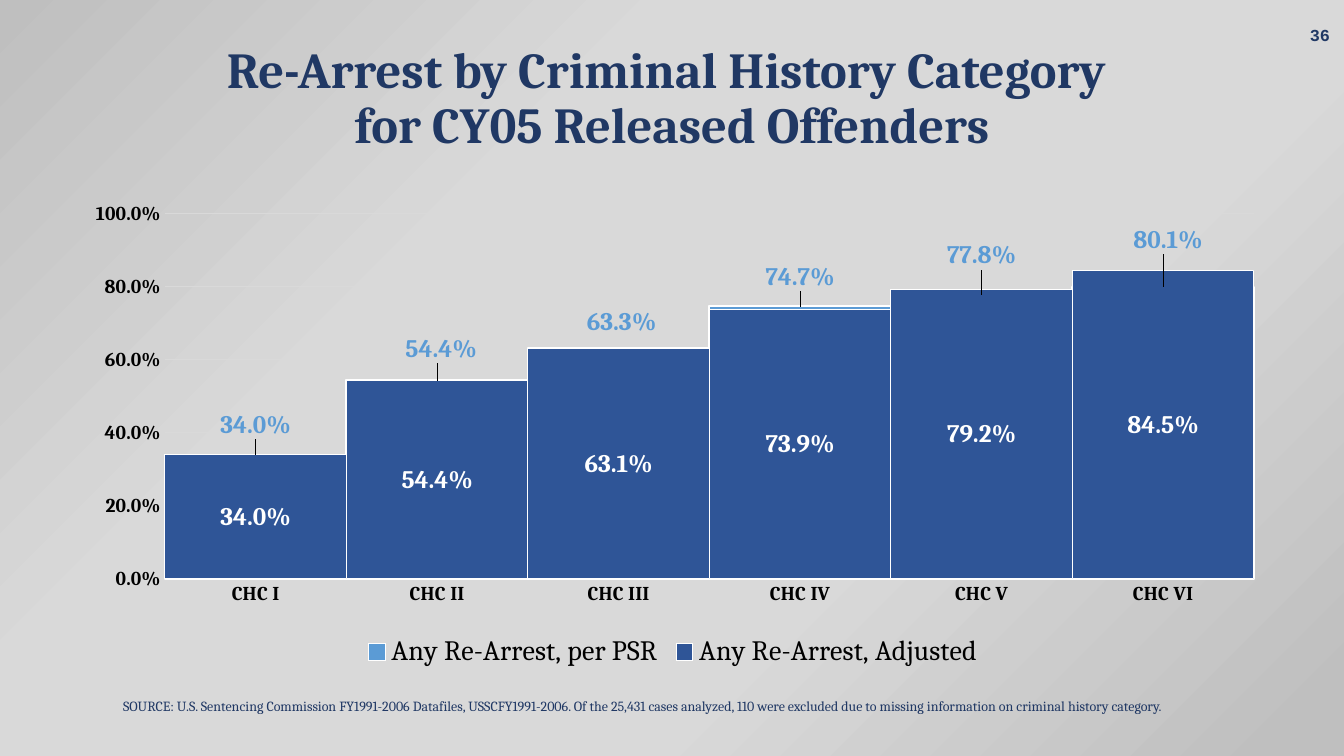
from copy import deepcopy

from lxml import etree
from pptx import Presentation
from pptx import util as u
from pptx.chart.data import CategoryChartData
from pptx.dml.color import RGBColor
from pptx.enum import chart as charts
from pptx.enum import text
from pptx.oxml.ns import qn

SCALE = 914400 / 100.8
SLIDE_BOX = (0, 0, 1344, 756)
FONT = "Cambria"
COLORS = {
    "navy": "203864",
    "light_blue": "5B9BD5",
    "dark_blue": "2F5597",
    "grid": "D9D9D9",
    "edge": "BFBFBF",
    "white": "FFFFFF",
    "black": "000000",
}
CATEGORIES = ["CHC I", "CHC II", "CHC III", "CHC IV", "CHC V", "CHC VI"]
PSR_RATES = [0.34, 0.544, 0.633, 0.747, 0.778, 0.801]
ADJUSTED_RATES = [0.34, 0.544, 0.631, 0.739, 0.792, 0.845]
PSR_LABEL_SHIFTS = [(0, -11), (4, -13), (3, -7), (0, -11), (0, -21), (5, -28)]
PERCENT = "0.0%"


def px(length):
    return u.Emu(round(length * SCALE))


def color(name):
    return RGBColor.from_string(COLORS[name])


def place(shape, box):
    shape.left, shape.top, shape.width, shape.height = map(px, box)


def format_font(font, size, ink="black", bold=False, name=FONT):
    font.name = name
    font.size = u.Pt(size)
    font.bold = bold
    font.color.rgb = color(ink)


def write(shape, words, size, align=text.PP_ALIGN.LEFT,
          anchor=text.MSO_ANCHOR.TOP, spacing=1.0, **style):
    frame = shape.text_frame
    frame.word_wrap = True
    frame.auto_size = text.MSO_AUTO_SIZE.NONE
    frame.vertical_anchor = anchor
    frame.text = words
    paragraph = frame.paragraphs[0]
    paragraph.alignment = align
    paragraph.line_spacing = spacing
    paragraph.space_before = u.Pt(0)
    for run in paragraph.runs:
        format_font(run.font, size, **style)
    return paragraph


def set_layout(parent, position, **values):
    for old in parent.findall(qn("c:layout")):
        parent.remove(old)
    layout = etree.Element(qn("c:layout"))
    manual = etree.SubElement(layout, qn("c:manualLayout"))
    for tag, value in values.items():
        etree.SubElement(manual, qn(f"c:{tag}")).set("val", str(value))
    parent.insert(position, layout)


def paint_background(slide):
    fill = slide.background.fill
    fill.gradient()
    gradient = slide.element.find(".//" + qn("a:gradFill"))
    stop_list = gradient.find(qn("a:gsLst"))
    for stop in list(stop_list)[1:]:
        stop_list.remove(stop)
    for _ in range(3):
        stop_list.append(deepcopy(stop_list[0]))
    tones = [(0, "edge"), (0.33, "grid"), (0.66, "grid"), (0.97, "edge")]
    for stop, (position, name) in zip(fill.gradient_stops, tones):
        stop.position = position
        stop.color.rgb = color(name)
    direction = gradient.find(qn("a:lin"))
    direction.set("ang", "2700000")
    direction.set("scaled", "0")


def add_heading(slide, box):
    left, top, width, height = box
    title = slide.shapes.title
    place(title, (left, top + 40, width, 133))
    write(title, "Re-Arrest by Criminal History Category \vfor CY05 Released Offenders",
          36, align=text.PP_ALIGN.CENTER, spacing=0.9, ink="navy", bold=True)
    number = slide.shapes.add_textbox(*map(px, (left + width - 306, top + 15, 302, 40)))
    write(number, "36", 12, align=text.PP_ALIGN.RIGHT, anchor=text.MSO_ANCHOR.MIDDLE,
          ink="navy", bold=True, name="Courier New")


def add_source(slide, box):
    source = slide.placeholders[1]
    place(source, box)
    paragraph = write(
        source,
        "SOURCE: U.S. Sentencing Commission FY1991-2006 Datafiles, USSCFY1991-2006. "
        "Of the 25,431 cases analyzed, 110 were excluded due to missing information "
        "on criminal history category.",
        10, spacing=0.9, ink="navy")
    properties = paragraph._p.get_or_add_pPr()
    properties.set("marL", "0")
    properties.set("indent", "0")
    properties.append(etree.Element(qn("a:buNone")))


def format_axes(chart):
    for axis in (chart.category_axis, chart.value_axis):
        axis.major_tick_mark = charts.XL_TICK_MARK.NONE
        axis.minor_tick_mark = charts.XL_TICK_MARK.NONE
        format_font(axis.tick_labels.font, 14, bold=True)
    values = chart.value_axis
    values.minimum_scale, values.maximum_scale, values.major_unit = 0, 1, 0.2
    values.tick_labels.number_format = PERCENT
    values.tick_labels.number_format_is_linked = False
    values.format.line.fill.background()
    values.has_major_gridlines = True
    for line in (values.major_gridlines.format.line, chart.category_axis.format.line):
        line.color.rgb = color("grid")
        line.width = u.Pt(0.75)


def format_series(series, fill, line_width, position, ink):
    series.format.fill.solid()
    series.format.fill.fore_color.rgb = color(fill)
    series.format.line.color.rgb = color("white")
    series.format.line.width = u.Pt(line_width)
    labels = series.data_labels
    labels.show_value = True
    labels.number_format = PERCENT
    labels.number_format_is_linked = False
    labels.position = position
    format_font(labels.font, 18, ink=ink, bold=True)


def add_rearrest_chart(slide, box):
    data = CategoryChartData(number_format=PERCENT)
    data.categories = CATEGORIES
    data.add_series("Any Re-Arrest, per PSR", PSR_RATES)
    data.add_series("Any Re-Arrest, Adjusted", ADJUSTED_RATES)
    chart = slide.shapes.add_chart(
        charts.XL_CHART_TYPE.COLUMN_CLUSTERED, *map(px, box), data).chart
    format_font(chart.font, 10)
    chart.has_title = False
    chart.has_legend = True
    chart.legend.position = charts.XL_LEGEND_POSITION.BOTTOM
    chart.legend.include_in_layout = False
    format_font(chart.legend.font, 20)
    format_axes(chart)

    plot = chart.plots[0]
    plot.gap_width, plot.overlap = 0, 100
    plot.vary_by_categories = False
    psr, adjusted = plot.series
    above = charts.XL_LABEL_POSITION.OUTSIDE_END
    format_series(psr, "light_blue", 1.5, above, "light_blue")
    format_series(adjusted, "dark_blue", 0.75, charts.XL_LABEL_POSITION.CENTER, "white")

    width, height = box[2:]
    for index, (across, down) in enumerate(PSR_LABEL_SHIFTS):
        label = psr.points[index].data_label
        label.position = above
        format_font(label.font, 18, ink="light_blue", bold=True)
    for entry, (across, down) in zip(psr.data_labels._element.findall(qn("c:dLbl")),
                                     PSR_LABEL_SHIFTS):
        set_layout(entry, 1, x=across / width, y=down / height)
    set_layout(chart._chartSpace.find(".//" + qn("c:plotArea")), 0,
               layoutTarget="inner", xMode="edge", yMode="edge",
               x=98 / width, y=20 / height, w=1089 / width, h=365 / height)


def main():
    presentation = Presentation()
    presentation.slide_width, presentation.slide_height = map(px, SLIDE_BOX[2:])
    slide = presentation.slides.add_slide(presentation.slide_layouts[1])
    paint_background(slide)
    add_heading(slide, SLIDE_BOX)
    add_rearrest_chart(slide, (67, 194, 1212, 480))
    add_source(slide, (113, 694, 1119, 75))
    presentation.save("out.pptx")


if __name__ == "__main__":
    main()
